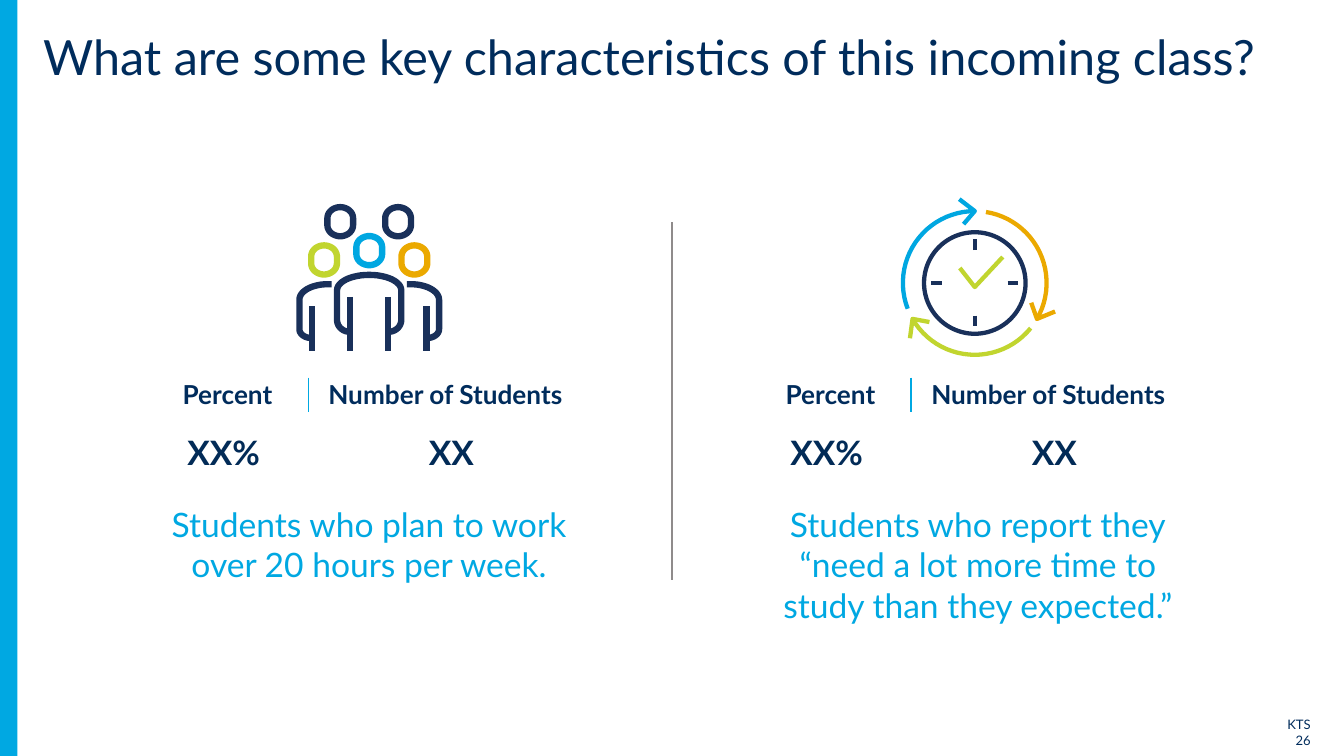
from dataclasses import dataclass
from math import cos, radians, sin

from lxml import etree
from pptx import Presentation
from pptx.dml.color import RGBColor
from pptx.enum import shapes, text
from pptx.oxml import ns
from pptx.util import Pt

Point = tuple[float, float]
Contour = list[Point]

COLOURS = {
    "navy": "002C5C",
    "ink": "022B57",
    "icon": "19305A",
    "blue": "00A8E2",
    "sky": "00A7E1",
    "lime": "C1D52F",
    "gold": "EBA900",
    "grey": "8F8B8B",
}
FONT = "Lato"


@dataclass
class Panel:
    left: float
    separator_width: float
    caption_left: float
    caption_width: float
    caption: list[str]


PANELS = [
    Panel(90.8, 0.75, 75, 245.5,
          ["Students who plan to work", "over 20 hours per week."]),
    Panel(413.8, 1, 381.5, 285,
          ["Students who report they", "“need a lot more time to",
           "study than they expected.”"]),
]


def rgb(name: str) -> RGBColor:
    return RGBColor.from_string(COLOURS[name])


def add_text(page, lines: list[str], left: float, top: float, width: float,
             height: float, *, size: float, colour: str = "navy",
             bold: bool = False, align=text.PP_ALIGN.LEFT,
             anchor=text.MSO_ANCHOR.TOP,
             spacing: float = 1.0, after: float = 0) -> None:
    box = page.shapes.add_textbox(Pt(left), Pt(top), Pt(width), Pt(height))
    frame = box.text_frame
    frame.word_wrap = True
    frame.vertical_anchor = anchor
    for index, line in enumerate(lines):
        para = frame.add_paragraph() if index else frame.paragraphs[0]
        para.alignment = align
        para.line_spacing = spacing
        para.space_after = Pt(after)
        span = para.add_run()
        span.text = line
        span.font.name = FONT
        span.font.size = Pt(size)
        span.font.bold = bold
        span.font.color.rgb = rgb(colour)


def add_line(page, start: Point, end: Point, colour: str, width: float) -> None:
    line = page.shapes.add_connector(
        shapes.MSO_CONNECTOR.STRAIGHT,
        Pt(start[0]), Pt(start[1]), Pt(end[0]), Pt(end[1]))
    line.line.color.rgb = rgb(colour)
    line.line.width = Pt(width)
    etree.SubElement(line.element.spPr, ns.qn("a:effectLst"))


def style_outline(shape, colour: str, width: float) -> None:
    shape.shadow.inherit = False
    shape.fill.background()
    shape.line.color.rgb = rgb(colour)
    shape.line.width = Pt(width)


def add_stroke(page, contours: list[Contour], colour: str, width: float,
               closed: bool = False) -> None:
    scaled = [[(Pt(x), Pt(y)) for x, y in contour] for contour in contours]
    builder = page.shapes.build_freeform(*scaled[0][0])
    for index, contour in enumerate(scaled):
        if index:
            builder.move_to(*contour[0])
        builder.add_line_segments(contour[1:], close=closed)
    style_outline(builder.convert_to_shape(), colour, width)


def arc(x: float, y: float, rx: float, ry: float, start: float, end: float,
        steps: int = 24) -> Contour:
    angles = [radians(start + (end - start) * i / steps) for i in range(steps + 1)]
    return [(x + rx * cos(a), y + ry * sin(a)) for a in angles]


def head(x: float, y: float) -> Contour:
    return arc(x, y - 1.8, 6.9, 6, 180, 360) + arc(x, y + 1.8, 6.9, 6, 0, 180)


def draw_people(page, x: float) -> None:
    width = 3.4

    def mirrored(contours: list[Contour]) -> list[Contour]:
        return contours + [[(2 * x - px, py) for px, py in c] for c in contours]

    torso = (arc(x - 10.4, 171.4, 6.8, 6.4, 90, 180)
             + arc(x, 155.5, 17.2, 8.2, 180, 360)
             + arc(x + 10.4, 171.4, 6.8, 6.4, 0, 90))
    side = ([(x + 20.2, 152.3)] + arc(x + 22.3, 160.6, 15.1, 8.3, 270, 360)
            + arc(x + 31, 176.4, 6.4, 4.7, 0, 90))
    legs = [[(x + dx, top), (x + dx, 188)] for dx, top in ((10.2, 159), (30.7, 164))]
    add_stroke(page, [torso], "icon", width)
    add_stroke(page, mirrored([side]), "icon", width)
    add_stroke(page, mirrored(legs), "icon", width)
    add_stroke(page, mirrored([head(x + 15.5, 118.8)]), "icon", width, closed=True)
    for dx, y, colour in ((0, 134.3, "sky"), (-24.2, 139.3, "lime"), (24.2, 139.3, "gold")):
        add_stroke(page, [head(x + dx, y)], colour, width, closed=True)


def draw_clock(page, x: float, y: float) -> None:
    width, face, orbit = 2.3, 27.2, 38.5
    dial = page.shapes.add_shape(shapes.MSO_SHAPE.OVAL, Pt(x - face), Pt(y - face),
                                 Pt(2 * face), Pt(2 * face))
    style_outline(dial, "icon", width)
    ticks = [[(x + r * dx, y + r * dy) for r in (17.6, 23.3)]
             for dx, dy in ((1, 0), (0, 1), (-1, 0), (0, -1))]
    add_stroke(page, ticks, "icon", width)
    add_stroke(page, [[(x - 8, y - 8), (x, y + 2.2), (x + 15, y - 13.9)]], "lime", width)
    for index, colour in enumerate(("lime", "sky", "gold")):
        start = 39 + 120 * index
        curve = arc(x, y, orbit, orbit, start, start + 111)
        angle = radians(start + 111)
        tip = curve[-1]
        outer, inner = [
            (tip[0] + back * sin(angle) + out * cos(angle),
             tip[1] - back * cos(angle) + out * sin(angle))
            for back, out in ((8.3, 6.4), (6, -7))]
        add_stroke(page, [curve, [outer, tip, inner]], colour, width)


def draw_panel(page, panel: Panel) -> None:
    label = dict(size=14, bold=True, after=16)
    value = dict(size=18, colour="ink", bold=True,
                 align=text.PP_ALIGN.CENTER, anchor=text.MSO_ANCHOR.MIDDLE)
    add_text(page, ["Percent"], panel.left, 199.2, 75, 24.5, **label)
    add_text(page, ["Number of Students"], panel.left + 78, 199.2, 153.5, 24.5, **label)
    add_text(page, ["XX%"], panel.left - 1, 221, 60, 42, **value)
    add_text(page, ["XX"], panel.left + 121, 221, 60, 42, **value)
    add_text(page, panel.caption, panel.caption_left, 266.4, panel.caption_width,
             7.2 + 21.8 * len(panel.caption), size=18, colour="blue",
             align=text.PP_ALIGN.CENTER)
    separator = panel.left + 74.4
    add_line(page, (separator, 202.3), (separator, 221), "blue", panel.separator_width)


def main() -> None:
    deck = Presentation()
    deck.slide_width, deck.slide_height = Pt(720), Pt(405)
    page = deck.slides.add_slide(deck.slide_layouts[6])
    add_text(page, ["KTS", "26"], 670.3, 380.2, 38.9, 15.8, size=7,
             align=text.PP_ALIGN.RIGHT)
    band = page.shapes.add_shape(shapes.MSO_SHAPE.RECTANGLE, 0, 0, Pt(9.4), Pt(405))
    band.shadow.inherit = False
    band.fill.solid()
    band.fill.fore_color.rgb = rgb("blue")
    band.line.fill.background()
    add_text(page, ["What are some key characteristics of this incoming class?"],
             16, 14.4, 704, 61, size=26, spacing=0.9)
    for panel in PANELS:
        draw_panel(page, panel)
    draw_people(page, 197.8)
    draw_clock(page, 522.2, 151.6)
    add_line(page, (360, 119), (360, 311), "grey", 0.75)
    deck.save("out.pptx")


if __name__ == "__main__":
    main()
